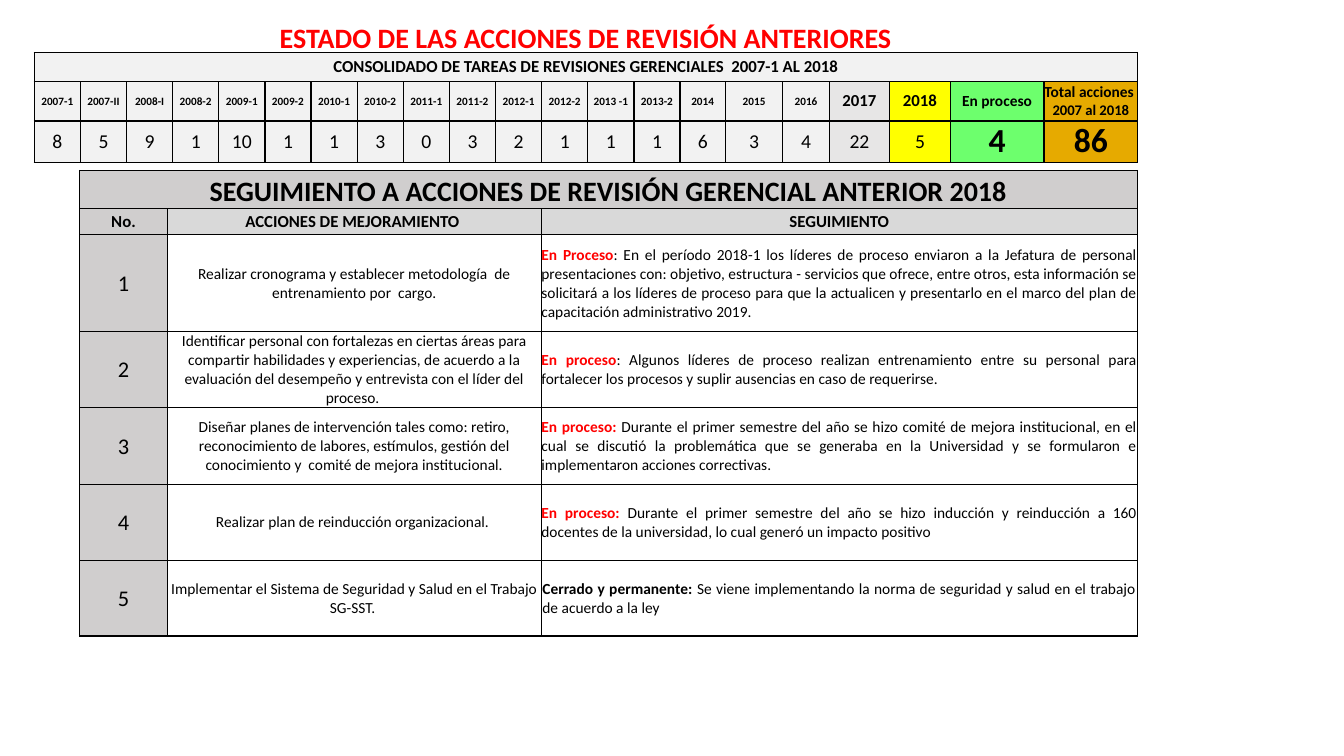
from dataclasses import dataclass

from lxml import etree
from pptx import Presentation
from pptx import util as u
from pptx.dml.color import RGBColor
from pptx.enum import text
from pptx.oxml import ns

FONT = "Calibri"
BLACK = RGBColor(0x00, 0x00, 0x00)
RED = RGBColor(0xFF, 0x00, 0x00)
WHITE = RGBColor(0xFF, 0xFF, 0xFF)
PALE_GREY = RGBColor(0xF2, 0xF2, 0xF2)
WARM_GREY = RGBColor(0xE7, 0xE6, 0xE6)
HEADER_GREY = RGBColor(0xD9, 0xD9, 0xD9)
DARK_GREY = RGBColor(0xD0, 0xCE, 0xCE)
YELLOW = RGBColor(0xFF, 0xFF, 0x00)
GREEN = RGBColor(0x6D, 0xFF, 0x6D)
AMBER = RGBColor(0xE6, 0xAA, 0x00)

CENTER = text.PP_ALIGN.CENTER
JUSTIFY = text.PP_ALIGN.JUSTIFY
MIDDLE = text.MSO_ANCHOR.MIDDLE
BOTTOM = text.MSO_ANCHOR.BOTTOM


@dataclass
class CellStyle:
    fill: RGBColor
    size: float
    bold: bool = False
    align: text.PP_ALIGN = CENTER
    anchor: text.MSO_ANCHOR = MIDDLE
    inset: float = 0


@dataclass
class Period:
    label: str
    count: str
    width: float
    fill: RGBColor = PALE_GREY
    label_size: float = 8
    count_size: float = 14
    count_bold: bool = False


@dataclass
class Action:
    task: str
    status: str
    follow_up: str
    height: float
    status_color: RGBColor = RED
    inset: float = 0


YEAR_WIDTH = 6.41 / 14
HALF_YEARS = [
    ("2007-1", "8"), ("2007-II", "5"), ("2008-I", "9"), ("2008-2", "1"),
    ("2009-1", "10"), ("2009-2", "1"), ("2010-1", "1"), ("2010-2", "3"),
    ("2011-1", "0"), ("2011-2", "3"), ("2012-1", "2"), ("2012-2", "1"),
    ("2013 -1", "1"), ("2013-2", "1"),
]
PERIODS = [Period(label, count, YEAR_WIDTH) for label, count in HALF_YEARS] + [
    Period("2014", "6", 0.45),
    Period("2015", "3", 0.57),
    Period("2016", "4", 0.46),
    Period("2017", "22", 0.6, WARM_GREY, 12),
    Period("2018", "5", 0.6, YELLOW, 12),
    Period("En proceso", "4", 0.93, GREEN, 11, 24, True),
    Period("Total acciones \n2007 al 2018", "86", 0.93, AMBER, 11, 24, True),
]

ACTIONS = [
    Action("Realizar cronograma y establecer metodología  de entrenamiento por  cargo.",
           "En Proceso",
           ": En el período 2018-1 los líderes de proceso enviaron a la Jefatura de personal "
           "presentaciones con: objetivo, estructura - servicios que ofrece, entre otros, esta "
           "información se solicitará a los líderes de proceso para que la actualicen y "
           "presentarlo en el marco del plan de capacitación administrativo 2019.", 0.96),
    Action("Identificar personal con fortalezas en ciertas áreas para compartir habilidades y "
           "experiencias, de acuerdo a la evaluación del desempeño y entrevista con el líder "
           "del proceso. ",
           "En proceso",
           ": Algunos líderes de proceso realizan entrenamiento entre su personal para "
           "fortalecer los procesos y suplir ausencias en caso de requerirse.", 0.75),
    Action("Diseñar planes de intervención tales como: retiro, reconocimiento de labores, "
           "estímulos, gestión del conocimiento y  comité de mejora institucional.",
           "En proceso: ",
           "Durante el primer semestre del año se hizo comité de mejora institucional, en el "
           "cual se discutió la problemática que se generaba en la Universidad y se formularon "
           "e implementaron acciones correctivas.", 0.77),
    Action("Realizar plan de reinducción organizacional. ",
           "En proceso: ",
           "Durante el primer semestre del año se hizo inducción y reinducción a 160 docentes "
           "de la universidad, lo cual generó un impacto positivo", 0.75),
    Action("Implementar el Sistema de Seguridad y Salud en el Trabajo SG-SST. ",
           "Cerrado y permanente: ",
           "Se viene implementando la norma de seguridad y salud en el trabajo de acuerdo a "
           "la ley", 0.75, BLACK, 0.01),
]


def add_borders(cell) -> None:
    properties = cell._tc.get_or_add_tcPr()
    for index, side in enumerate(("lnL", "lnR", "lnT", "lnB")):
        line = etree.Element(ns.qn(f"a:{side}"), w=str(u.Pt(1)))
        solid = etree.SubElement(line, ns.qn("a:solidFill"))
        etree.SubElement(solid, ns.qn("a:srgbClr"), val=str(BLACK))
        properties.insert(index, line)


def write_cell(cell, content: str, style: CellStyle) -> None:
    cell.text = content
    cell.vertical_anchor = style.anchor
    cell.margin_left = cell.margin_right = cell.margin_top = u.Inches(style.inset)
    cell.margin_bottom = 0
    cell.fill.solid()
    cell.fill.fore_color.rgb = style.fill
    for paragraph in cell.text_frame.paragraphs:
        paragraph.alignment = style.align
        font = paragraph.font
        font.name, font.size, font.bold = FONT, u.Pt(style.size), style.bold
        font.color.rgb = BLACK


def add_grid(slide, left: float, top: float, widths: list[float], heights: list[float]):
    """Add a plain bordered table whose first row is merged."""
    frame = slide.shapes.add_table(
        len(heights), len(widths), u.Inches(left), u.Inches(top),
        u.Inches(sum(widths)), u.Inches(sum(heights)))
    table = frame.table
    table.first_row = table.horz_banding = False
    for column, width in zip(table.columns, widths):
        column.width = u.Inches(width)
    for row, height in zip(table.rows, heights):
        row.height = u.Inches(height)
    for cell in table.iter_cells():
        add_borders(cell)
    table.cell(0, 0).merge(table.cell(0, len(widths) - 1))
    return table


def add_title(slide) -> None:
    title = slide.shapes.title
    title.left, title.top = u.Inches(0.33), u.Inches(0.15)
    title.width, title.height = u.Inches(10.96), u.Inches(0.44)
    frame = title.text_frame
    frame.text = "ESTADO DE LAS ACCIONES DE REVISIÓN ANTERIORES"
    frame.word_wrap = True
    frame.auto_size = text.MSO_AUTO_SIZE.SHAPE_TO_FIT_TEXT
    frame.vertical_anchor = text.MSO_ANCHOR.TOP
    paragraph = frame.paragraphs[0]
    paragraph.alignment = CENTER
    font = paragraph.font
    font.name, font.size, font.bold = FONT, u.Pt(20), True
    font.color.rgb = RED


def add_summary(slide) -> None:
    table = add_grid(slide, 0.34, 0.52, [period.width for period in PERIODS],
                     [0.29, 0.39, 0.41])
    write_cell(table.cell(0, 0),
               "CONSOLIDADO DE TAREAS DE REVISIONES GERENCIALES  2007-1 AL 2018",
               CellStyle(PALE_GREY, 12, True))
    for column, period in enumerate(PERIODS):
        write_cell(table.cell(1, column), period.label,
                   CellStyle(period.fill, period.label_size, True))
        write_cell(table.cell(2, column), period.count,
                   CellStyle(period.fill, period.count_size, period.count_bold))
    # The second line of the total heading is slightly smaller
    table.cell(1, len(PERIODS) - 1).text_frame.paragraphs[1].font.size = u.Pt(10.5)


def add_tracking(slide) -> None:
    table = add_grid(slide, 0.79, 1.69, [0.87, 3.71, 5.91],
                     [0.38, 0.26] + [action.height for action in ACTIONS])
    write_cell(table.cell(0, 0), "SEGUIMIENTO A ACCIONES DE REVISIÓN GERENCIAL ANTERIOR 2018",
               CellStyle(DARK_GREY, 20, True, anchor=BOTTOM, inset=0.01))
    headings = [("No.", DARK_GREY), ("ACCIONES DE MEJORAMIENTO ", HEADER_GREY),
                ("SEGUIMIENTO", HEADER_GREY)]
    for column, (heading, fill) in enumerate(headings):
        write_cell(table.cell(1, column), heading, CellStyle(fill, 12, True, inset=0.01))
    for number, action in enumerate(ACTIONS, start=1):
        number_cell, task_cell, follow_up_cell = table.rows[number + 1].cells
        write_cell(number_cell, str(number), CellStyle(DARK_GREY, 16, inset=0.01))
        write_cell(task_cell, action.task, CellStyle(WHITE, 11))
        write_cell(follow_up_cell, action.status,
                   CellStyle(WHITE, 11, align=JUSTIFY, inset=action.inset))
        paragraph = follow_up_cell.text_frame.paragraphs[0]
        status = paragraph.runs[0]
        status.font.bold = True
        status.font.color.rgb = action.status_color
        paragraph.add_run().text = action.follow_up


def main() -> None:
    presentation = Presentation()
    presentation.slide_width, presentation.slide_height = u.Inches(13.33), u.Inches(7.5)
    slide = presentation.slides.add_slide(presentation.slide_layouts[5])
    add_title(slide)
    add_summary(slide)
    add_tracking(slide)
    presentation.save("out.pptx")


if __name__ == "__main__":
    main()
